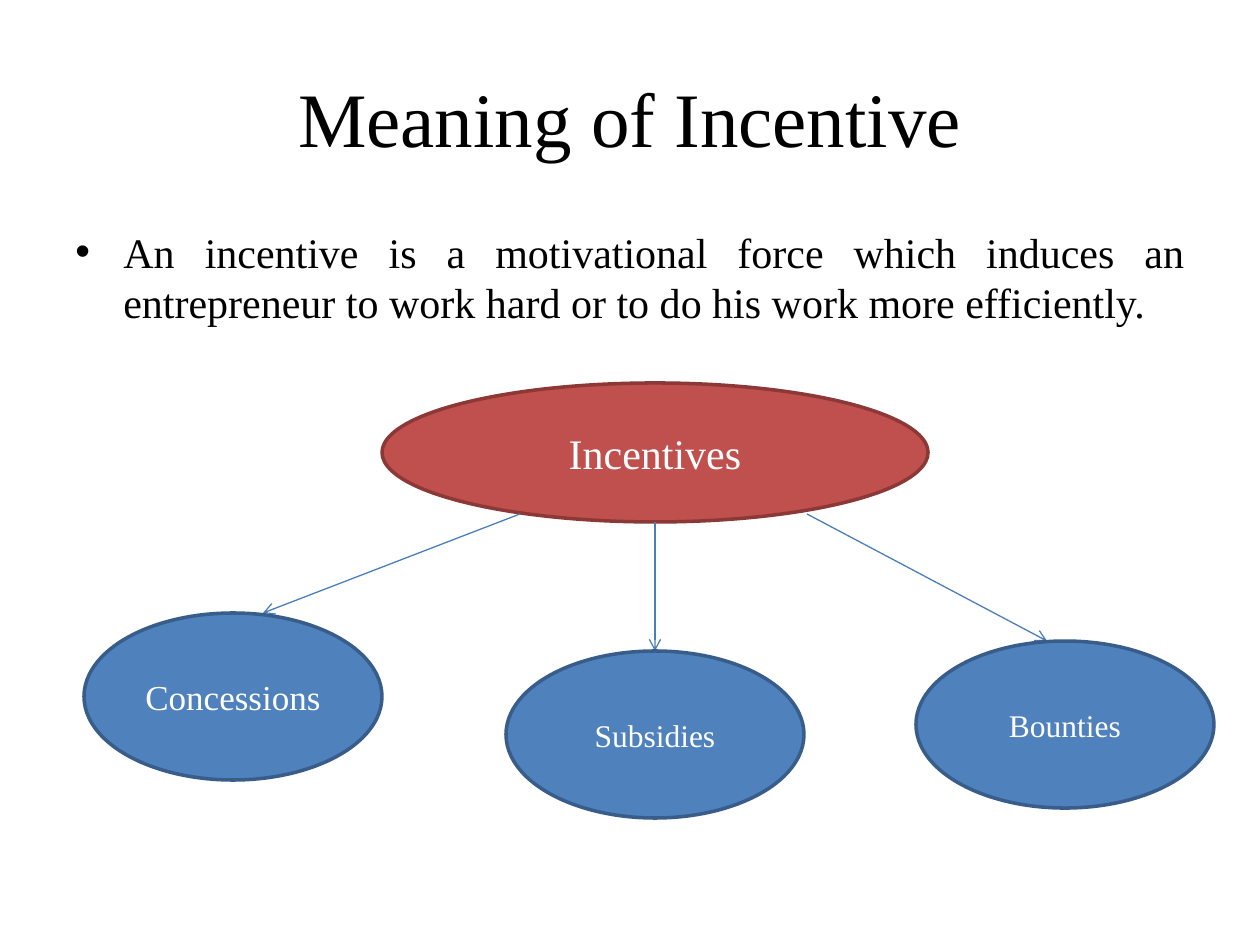
from dataclasses import dataclass

import lxml.etree
import pptx
import pptx.dml.color
import pptx.enum.shapes
import pptx.enum.text
import pptx.oxml.ns
import pptx.util

PX_PER_INCH = 126
ALIGN = pptx.enum.text.PP_ALIGN
ANCHOR = pptx.enum.text.MSO_ANCHOR
qn = pptx.oxml.ns.qn


@dataclass(frozen=True)
class Theme:
    font: str = "Times New Roman"
    ink: str = "000000"
    light: str = "FFFFFF"
    red: str = "C0504D"
    red_edge: str = "8C3836"
    blue: str = "4F81BD"
    blue_edge: str = "385D8A"
    arrow: str = "4A7EBB"
    title: int = 44
    body: int = 24
    large: int = 20
    small: int = 18
    edge_width: float = 2
    arrow_width: float = 0.75


@dataclass(frozen=True)
class Oval:
    text: str
    x: int
    y: int
    w: int
    h: int
    size: int
    fill: str
    edge: str


@dataclass(frozen=True)
class Arrow:
    x1: int
    y1: int
    x2: int
    y2: int


THEME = Theme()
CHILD_W, CHILD_H = 298, 167


def child(text: str, x: int, y: int, size: int) -> Oval:
    return Oval(text, x, y, CHILD_W, CHILD_H, size, THEME.blue, THEME.blue_edge)


ROOT = Oval("Incentives", 382, 383, 546, 139, THEME.body, THEME.red, THEME.red_edge)
CHILDREN = [
    child("Concessions", 84, 613, THEME.large),
    child("Subsidies", 506, 651, THEME.small),
    child("Bounties", 916, 641, THEME.small),
]
ARROWS = [
    Arrow(520, 514, 263, 613),
    Arrow(655, 522, 655, 651),
    Arrow(807, 514, 1047, 641),
]


def px(n: int) -> int:
    return round(n * pptx.util.Inches(1) / PX_PER_INCH)


def rgb(value: str) -> pptx.dml.color.RGBColor:
    return pptx.dml.color.RGBColor.from_string(value)


def write(sp, text: str, size: int, color: str, align, anchor):
    tf = sp.text_frame
    tf.word_wrap = True
    tf.vertical_anchor = anchor
    p = tf.paragraphs[0]
    p.alignment = align
    r = p.add_run()
    r.text = text
    r.font.name = THEME.font
    r.font.size = pptx.util.Pt(size)
    r.font.color.rgb = rgb(color)
    return p


def add_text(s, x: int, y: int, w: int, h: int, text: str, size: int, align, anchor):
    sp = s.shapes.add_textbox(px(x), px(y), px(w), px(h))
    return write(sp, text, size, THEME.ink, align, anchor)


def add_bullet(p, indent: int) -> None:
    pPr = p._p.get_or_add_pPr()
    pPr.set("marL", str(px(indent)))
    pPr.set("indent", str(-px(indent)))
    lxml.etree.SubElement(pPr, qn("a:buFont")).set("typeface", "Arial")
    lxml.etree.SubElement(pPr, qn("a:buChar")).set("char", "•")


def add_oval(s, oval: Oval) -> None:
    sp = s.shapes.add_shape(
        pptx.enum.shapes.MSO_SHAPE.OVAL, px(oval.x), px(oval.y), px(oval.w), px(oval.h)
    )
    sp.shadow.inherit = False
    sp.fill.solid()
    sp.fill.fore_color.rgb = rgb(oval.fill)
    sp.line.color.rgb = rgb(oval.edge)
    sp.line.width = pptx.util.Pt(THEME.edge_width)
    write(sp, oval.text, oval.size, THEME.light, ALIGN.CENTER, ANCHOR.MIDDLE)


def add_arrow(s, arrow: Arrow) -> None:
    sp = s.shapes.add_connector(
        pptx.enum.shapes.MSO_CONNECTOR.STRAIGHT,
        px(arrow.x1), px(arrow.y1), px(arrow.x2), px(arrow.y2),
    )
    sp.line.color.rgb = rgb(THEME.arrow)
    sp.line.width = pptx.util.Pt(THEME.arrow_width)
    lxml.etree.SubElement(sp.line._get_or_add_ln(), qn("a:tailEnd")).set("type", "arrow")
    lxml.etree.SubElement(sp._element.spPr, qn("a:effectLst"))


def main() -> None:
    prs = pptx.Presentation()
    prs.slide_width = px(1260)
    prs.slide_height = px(945)
    s = prs.slides.add_slide(prs.slide_layouts[6])

    add_text(s, 63, 38, 1134, 158, "Meaning of Incentive",
             THEME.title, ALIGN.CENTER, ANCHOR.MIDDLE)
    p = add_text(
        s, 63, 220, 1134, 624,
        "An incentive is a motivational force which induces an entrepreneur "
        "to work hard or to do his work more efficiently.",
        THEME.body, ALIGN.JUSTIFY, ANCHOR.TOP,
    )
    p.space_before = pptx.util.Pt(THEME.body * 0.2)
    add_bullet(p, 48)

    add_oval(s, ROOT)
    for arrow in ARROWS:
        add_arrow(s, arrow)
    for oval in CHILDREN:
        add_oval(s, oval)

    prs.save("out.pptx")


if __name__ == "__main__":
    main()
